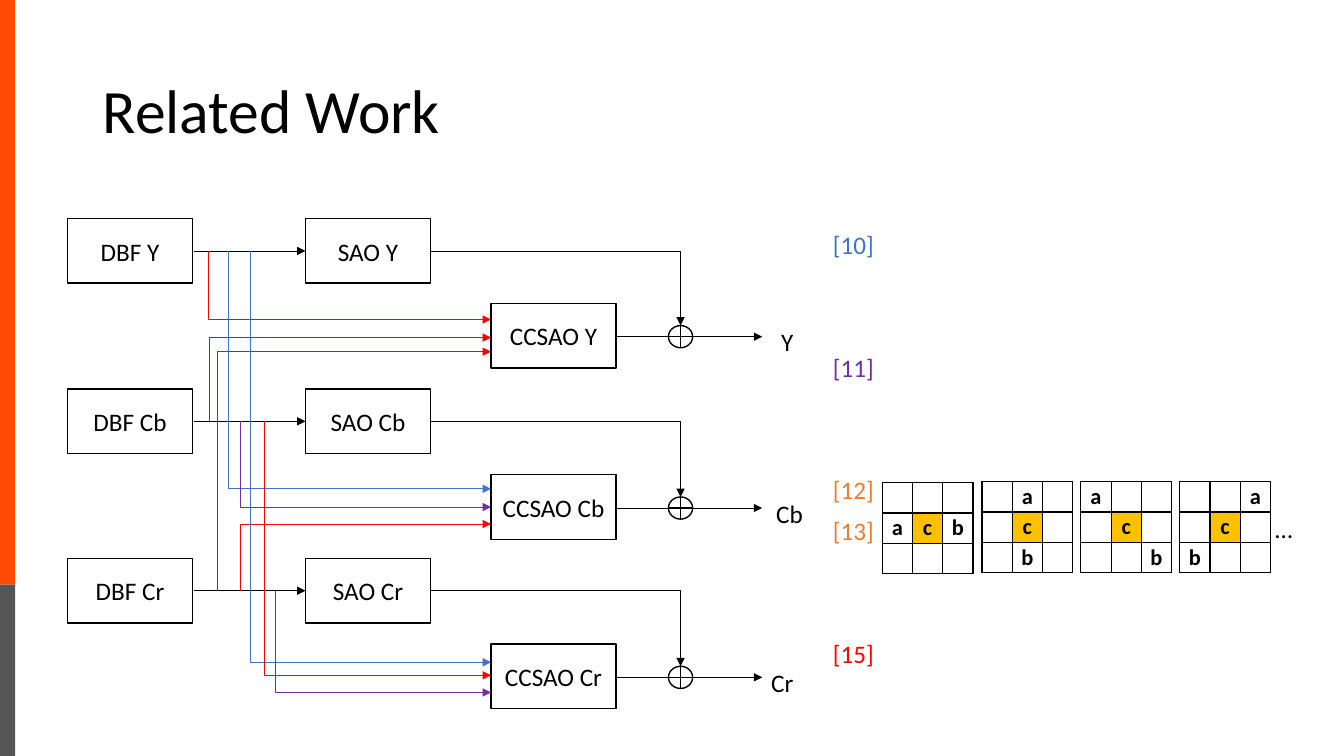
from lxml import etree
from pptx import Presentation
from pptx.dml.color import RGBColor as Rgb
from pptx.enum.shapes import MSO_CONNECTOR as Conn, MSO_SHAPE as Geo
from pptx.enum.text import MSO_ANCHOR as Anchor, PP_ALIGN as Align
from pptx.oxml import parse_xml
from pptx.oxml.ns import nsdecls, qn
from pptx.util import Pt

PX = 9144  # 100 px to the inch
HUES = {
    "ink": "000000", "paper": "FFFFFF", "bar": "FF4906", "foot": "555555",
    "red": "FF0000", "blue": "4472C4", "plum": "7030A0",
    "rust": "ED7D31", "gold": "FFC000",
}
# Name, top of its box, and y where its cross-component output runs
ROWS = [("Y", 217, 334), ("Cb", 386, 504), ("Cr", 554, 672)]
MID = 32  # half a box height
# Colour, x of the drop, source row, y of the arrow
WIRES = [
    ("red", 207, 0, 317), ("red", 208, 1, 335), ("red", 216, 2, 349),
    ("blue", 227, 0, 485), ("plum", 238, 1, 503), ("red", 238, 2, 520),
    ("blue", 248, 0, 657), ("red", 262, 1, 670), ("plum", 273, 2, 687),
]
# Citation, colour, space before in points
CITES = [("[10]", "blue", 0), ("[11]", "plum", 68), ("[12]", "rust", 68),
         ("[13]", "rust", 10), ("[15]", "red", 68)]
# Left, top, and the cell of "a"; "b" lies opposite
GRIDS = [(875, 479, (1, 0)), (974, 478, (0, 1)),
         (1072, 478, (0, 0)), (1170, 478, (0, 2))]


def rgb(hue):
    return Rgb.from_string(HUES[hue])


def emu(*nums):
    return [n * PX for n in nums]


def place(shape, *box):
    shape.left, shape.top, shape.width, shape.height = emu(*box)


def write(para, text, size=18, hue="ink", bold=False):
    run = para.add_run()
    run.text = text
    font = run.font
    font.name, font.size, font.bold = "Calibri", Pt(size), bold
    font.color.rgb = rgb(hue)


def block(slide, box, fill, line=None, text=None, geo=Geo.RECTANGLE):
    shape = slide.shapes.add_shape(geo, *emu(*box))
    shape.shadow.inherit = False
    shape.fill.solid()
    shape.fill.fore_color.rgb = rgb(fill)
    if line:
        shape.line.color.rgb = rgb(line)
        shape.line.width = Pt(1)
    else:
        shape.line.fill.background()
    if text:
        frame = shape.text_frame
        frame.margin_left = frame.margin_right = 0
        frame.vertical_anchor = Anchor.MIDDLE
        para = frame.paragraphs[0]
        para.alignment = Align.CENTER
        write(para, text)


def arrow(slide, start, end, hue="ink", bend=None):
    kind = Conn.ELBOW if bend else Conn.STRAIGHT
    link = slide.shapes.add_connector(kind, *emu(*start, *end))
    link.line.color.rgb = rgb(hue)
    link.line.width = Pt(0.5)
    props = link._element.spPr
    etree.SubElement(props.find(qn("a:ln")), qn("a:tailEnd"), type="triangle")
    etree.SubElement(props, qn("a:effectLst"))
    if bend:
        geom = props.find(qn("a:prstGeom"))
        geom.set("prst", bend)
        if bend == "bentConnector3":  # drop first, then run across
            geom.replace(geom.find(qn("a:avLst")), parse_xml(
                f'<a:avLst {nsdecls("a")}><a:gd name="adj1" fmla="val 0"/></a:avLst>'))


def label(slide, box, text):
    frame = slide.shapes.add_textbox(*emu(*box)).text_frame
    frame.word_wrap = True
    write(frame.paragraphs[0], text)


def side(slide, box):
    left, top, width, height = box
    block(slide, (left, top, width, 580), "bar")
    block(slide, (left, top + 580, width, height - 580), "foot")


def title(slide, box):
    shape = slide.shapes.title
    place(shape, *box)
    frame = shape.text_frame
    frame.vertical_anchor = Anchor.MIDDLE
    para = frame.paragraphs[0]
    para.alignment, para.line_spacing = Align.LEFT, 0.9
    write(para, "Related Work", 44)


def row(slide, left, name, top, out, shift):
    """One channel: filter boxes, sum sign and output."""
    mid = top + MID
    sum_x = left + 608
    arrow(slide, (left + 125, mid), (left + 236, mid))
    arrow(slide, (left + 360, mid), (sum_x, out - 11), bend="bentConnector2")
    arrow(slide, (left + 544, out), (left + 689, out))
    for kind, x, y in [("DBF", 0, top), ("SAO", 236, top),
                       ("CCSAO", 420, out - MID - 1)]:
        block(slide, (left + x, y, 124, 64), "paper", "ink", f"{kind} {name}")
    block(slide, (sum_x - 12, out - 11, 24, 22), "paper", "ink",
          geo=Geo.FLOWCHART_OR)
    label(slide, (left + 698 - shift, out - 15, 68, 30), name)


def flow(slide, left):
    for i, (name, top, out) in enumerate(ROWS):
        row(slide, left, name, top, out, i * 5)
    for hue, x, src, y in WIRES:
        arrow(slide, (x, ROWS[src][1] + MID), (left + 420, y), hue,
              "bentConnector3")


def cites(slide, box):
    body = slide.placeholders[1]
    place(body, *box)
    frame = body.text_frame
    for i, (text, hue, gap) in enumerate(CITES):
        para = frame.add_paragraph() if i else frame.paragraphs[0]
        props = para._p.get_or_add_pPr()
        props.set("marL", "0")
        props.set("indent", "0")
        etree.SubElement(props, qn("a:buNone"))
        para.line_spacing, para.space_before = 0.9, Pt(gap)
        write(para, text, hue=hue)


def border(cell):
    props = cell._tc.get_or_add_tcPr()
    for edge in "LRTB":
        props.append(parse_xml(
            f'<a:ln{edge} {nsdecls("a")} w="12700"><a:solidFill>'
            f'<a:srgbClr val="{HUES["ink"]}"/></a:solidFill></a:ln{edge}>'))


def grid(slide, left, top, spot):
    side_px = 30
    table = slide.shapes.add_table(
        3, 3, *emu(left, top, 3 * side_px, 3 * side_px)).table
    table.first_row = table.horz_banding = False
    marks = {spot: "a", (1, 1): "c", (2 - spot[0], 2 - spot[1]): "b"}
    for r in range(3):
        table.rows[r].height = table.columns[r].width = side_px * PX
        for c in range(3):
            cell = table.cell(r, c)
            cell.margin_left = cell.margin_right = 0
            cell.margin_top = cell.margin_bottom = 0
            cell.vertical_anchor = Anchor.MIDDLE
            border(cell)
            if (r, c) == (1, 1):
                cell.fill.solid()
                cell.fill.fore_color.rgb = rgb("gold")
            else:
                cell.fill.background()
            para = cell.text_frame.paragraphs[0]
            para.alignment = Align.CENTER
            if (r, c) in marks:
                write(para, marks[r, c], 16, bold=True)
            else:  # keep empty rows from growing
                etree.SubElement(para._p, qn("a:endParaRPr"), sz="1600")


def main():
    deck = Presentation()
    deck.slide_width, deck.slide_height = emu(1333, 750)
    slide = deck.slides.add_slide(deck.slide_layouts[1])
    side(slide, (0, 0, 15, 750))
    title(slide, (92, 40, 1150, 145))
    flow(slide, 67)
    cites(slide, (816, 226, 96, 472))
    for left, top, spot in GRIDS:
        grid(slide, left, top, spot)
    label(slide, (1255, 504, 60, 40), "…")
    deck.save("out.pptx")


if __name__ == "__main__":
    main()
